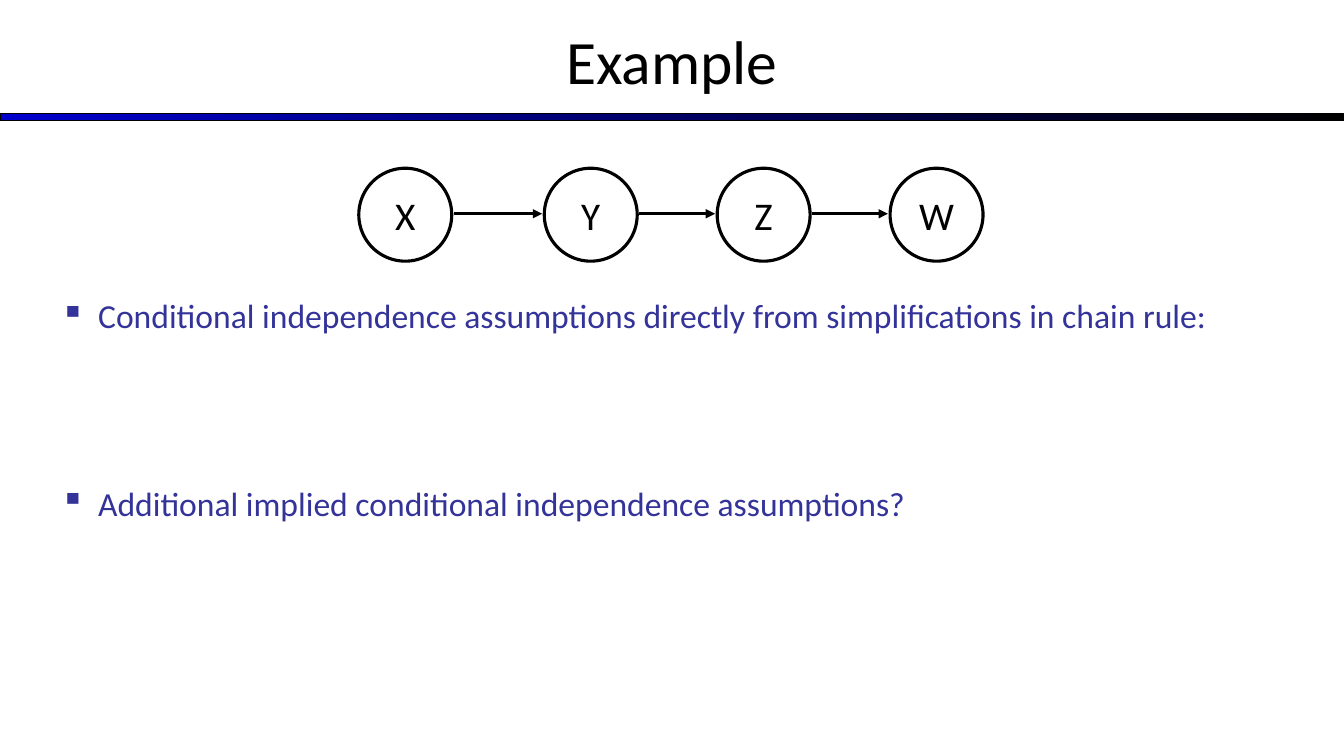
from dataclasses import dataclass
from itertools import pairwise

from lxml import etree
from pptx import Presentation
from pptx.dml.color import RGBColor
from pptx.enum.shapes import MSO_CONNECTOR, MSO_SHAPE
from pptx.enum.text import MSO_ANCHOR, PP_ALIGN
from pptx.oxml.ns import qn
from pptx.util import Pt

RECTANGLE, OVAL = MSO_SHAPE.RECTANGLE, MSO_SHAPE.OVAL
STRAIGHT = MSO_CONNECTOR.STRAIGHT
TOP, MIDDLE = MSO_ANCHOR.TOP, MSO_ANCHOR.MIDDLE
LEFT, CENTER = PP_ALIGN.LEFT, PP_ALIGN.CENTER

PAGE_WIDTH, PAGE_HEIGHT = 960, 540
NODE_TOP, NODE_SIZE = 120.2, 66.4
ARROW_Y, ARROW_GAP = 152.7, 1.5
BULLET_INDENT = 27


@dataclass(frozen=True)
class Theme:
    font: str = "Calibri"
    ink: RGBColor = RGBColor(0, 0, 0)
    paper: RGBColor = RGBColor(255, 255, 255)
    bar: RGBColor = RGBColor(0, 0, 0xCC)
    body: RGBColor = RGBColor(0x33, 0x33, 0x99)
    title_size: float = 44
    node_size: float = 28
    body_size: float = 24
    thin: float = 0.75
    thick: float = 2.25


def apply(target, values):
    for name, value in values.items():
        setattr(target, name, value)


class SlideBuilder:
    def __init__(self, page, theme):
        self.page = page
        self.theme = theme

    def add_text(self, para, text, size, color, align):
        para.alignment = align
        span = para.add_run()
        span.text = text
        apply(span.font, {"name": self.theme.font, "size": Pt(size)})
        span.font.color.rgb = color

    def outline(self, line, width):
        line.color.rgb = self.theme.ink
        line.width = Pt(width)

    def shape(self, kind, left, top, width, height, line_width):
        shape = self.page.shapes.add_shape(kind, Pt(left), Pt(top), Pt(width), Pt(height))
        shape.shadow.inherit = False
        self.outline(shape.line, line_width)
        return shape

    def text_box(self, left, top, width, height, anchor):
        box = self.page.shapes.add_textbox(Pt(left), Pt(top), Pt(width), Pt(height))
        apply(box.text_frame, {"word_wrap": True, "vertical_anchor": anchor})
        return box.text_frame

    def gradient_bar(self, top, height):
        bar = self.shape(RECTANGLE, 0, top, PAGE_WIDTH, height, self.theme.thin)
        bar.fill.gradient()
        bar.fill.gradient_angle = 0
        for stop, color in zip(bar.fill.gradient_stops, (self.theme.bar, self.theme.ink)):
            stop.color.rgb = color

    def title(self, text):
        frame = self.text_box(0, -2.2, PAGE_WIDTH, 90, MIDDLE)
        self.add_text(frame.paragraphs[0], text, self.theme.title_size, self.theme.ink, CENTER)

    def node(self, label, left):
        circle = self.shape(OVAL, left, NODE_TOP, NODE_SIZE, NODE_SIZE, self.theme.thick)
        circle.fill.solid()
        circle.fill.fore_color.rgb = self.theme.paper
        frame = circle.text_frame
        apply(frame, {"word_wrap": False, "vertical_anchor": MIDDLE})
        self.add_text(frame.paragraphs[0], label, self.theme.node_size, self.theme.ink, CENTER)

    def arrow(self, start, end):
        arrow = self.page.shapes.add_connector(
            STRAIGHT, Pt(start), Pt(ARROW_Y), Pt(end), Pt(ARROW_Y))
        self.outline(arrow.line, self.theme.thick)
        properties = arrow._element.spPr
        etree.SubElement(properties.find(qn("a:ln")), qn("a:tailEnd"), type="triangle")
        etree.SubElement(properties, qn("a:effectLst"))

    def bullets(self, items):
        """Add (text, space before) pairs as one bulleted list."""
        frame = self.text_box(36, 207.4, 864, 266.4, TOP)
        for index, (text, space) in enumerate(items):
            para = frame.add_paragraph() if index else frame.paragraphs[0]
            self.add_text(para, text, self.theme.body_size, self.theme.body, LEFT)
            para.space_before = Pt(space)
            properties = para._p.get_or_add_pPr()
            properties.set("marL", str(Pt(BULLET_INDENT)))
            properties.set("indent", str(-Pt(BULLET_INDENT)))
            etree.SubElement(properties, qn("a:buChar"), char="▪")


def main():
    deck = Presentation()
    apply(deck, {"slide_width": Pt(PAGE_WIDTH), "slide_height": Pt(PAGE_HEIGHT)})
    builder = SlideBuilder(deck.slides.add_slide(deck.slide_layouts[6]), Theme())

    builder.gradient_bar(81.3, 5)
    builder.title("Example")

    chain = {"X": 256.3, "Y": 388.8, "Z": 512.3, "W": 635.8}
    for label, left in chain.items():
        builder.node(label, left)
    for left, following in pairwise(chain.values()):
        builder.arrow(left + NODE_SIZE + ARROW_GAP, following - ARROW_GAP)

    builder.bullets([
        ("Conditional independence assumptions directly from simplifications in chain rule:", 0),
        ("Additional implied conditional independence assumptions?", 105),
    ])
    deck.save("out.pptx")


if __name__ == "__main__":
    main()
